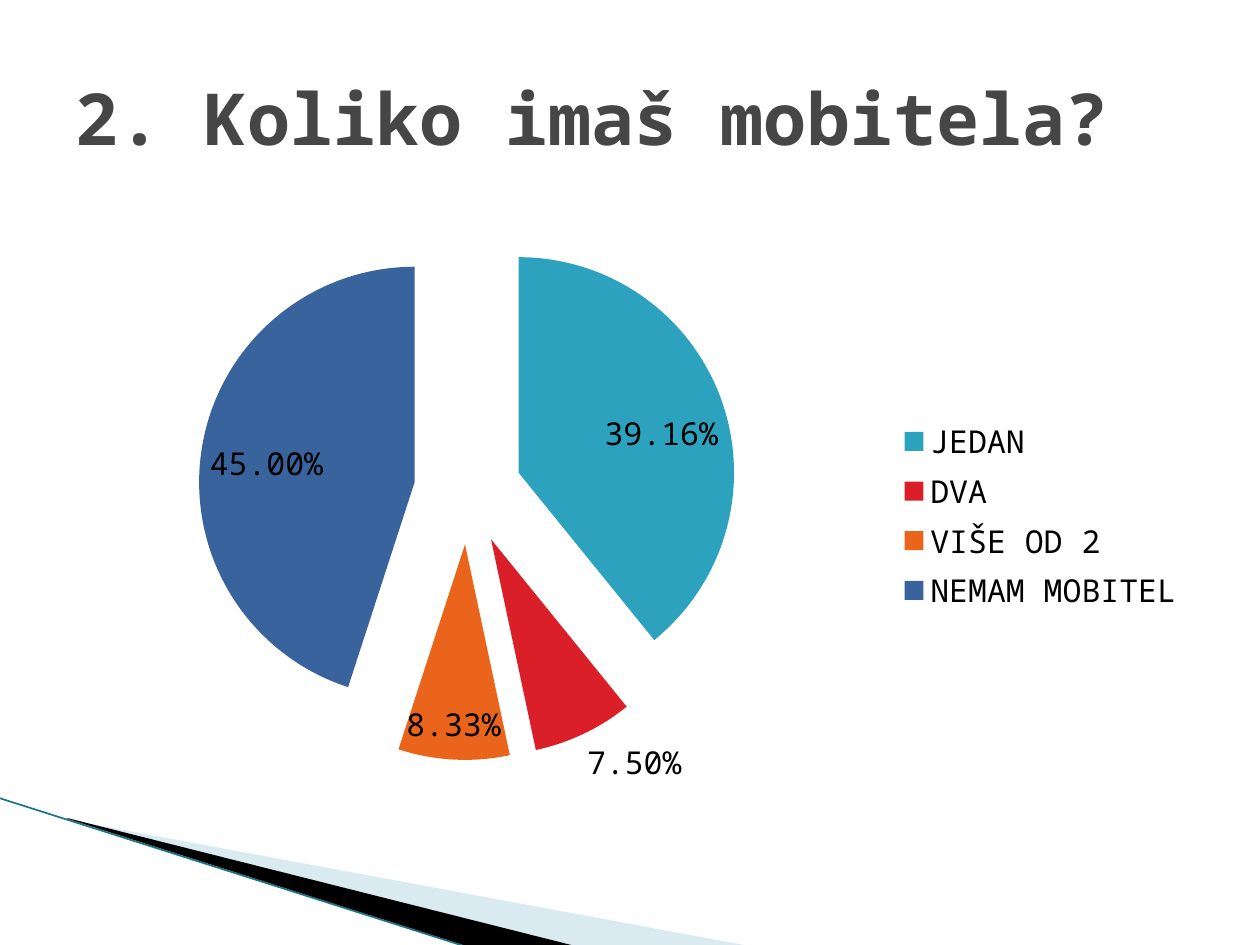
from lxml import etree
from pptx import Presentation
from pptx.chart.data import CategoryChartData
from pptx.dml.color import RGBColor
from pptx.enum.chart import XL_CHART_TYPE as CT, XL_LABEL_POSITION as LP, XL_LEGEND_POSITION as LG
from pptx.enum.shapes import MSO_CONNECTOR
from pptx.enum.text import MSO_ANCHOR
from pptx.oxml import parse_xml
from pptx.oxml.ns import qn
from pptx.util import Pt

FONT = "Noto Sans Mono"
TITLE = "2. Koliko imaš mobitela?"
ANSWERS = [
    ("JEDAN", 0.3916, "2DA2BF"),
    ("DVA", 0.075, "DA1F28"),
    ("VIŠE OD 2", 0.0833, "EB641B"),
    ("NEMAM MOBITEL", 0.45, "39639D"),
]
WEDGES = [
    ((98, 689, 524, 199), [(69, 820), (749, 946), (575, 946), (69, 819)], "A0CBDC", 40),
    ((-8, 798, 524, 116), [(67, 818), (575, 946), (469, 947), (68, 819)], "000000", 100),
]
EDGE = (-1, 798, 467, 947)
EDGE_COLOR = "1A7488"
TITLE_BOX = (63, 38, 1134, 157)
CHART_BOX = (63, 204, 1134, 624)
SCALE = 914400 / 126


def px(*values):
    return [round(v * SCALE) for v in values]


def rgb(color):
    return RGBColor.from_string(color)


def set_font(font, size, color, bold=False):
    font.name, font.size, font.bold = FONT, Pt(size), bold
    font.color.rgb = rgb(color)


def set_frame(sp, frame, points):
    """Give a freeform a frame of its own, keeping its points in place."""
    left, top, width, height = frame
    sp.left, sp.top, sp.width, sp.height = px(*frame)
    outline = sp._element.find(".//" + qn("a:path"))
    outline.set("w", str(width))
    outline.set("h", str(height))
    for pt, (x, y) in zip(outline.iter(qn("a:pt")), points):
        pt.set("x", str(x - left))
        pt.set("y", str(y - top))


def add_wedge(s, frame, points, color, opacity):
    builder = s.shapes.build_freeform(*points[0], scale=SCALE)
    builder.add_line_segments(points[1:], close=False)
    sp = builder.convert_to_shape()
    set_frame(sp, frame, points)
    sp.shadow.inherit = False
    sp.fill.solid()
    sp.fill.fore_color.rgb = rgb(color)
    sp.line.fill.background()
    if opacity < 100:
        clr = sp.fill._xPr.find(".//" + qn("a:srgbClr"))
        etree.SubElement(clr, qn("a:alpha"), val=str(opacity * 1000))


def add_edge(s):
    line = s.shapes.add_connector(MSO_CONNECTOR.STRAIGHT, *px(*EDGE))
    line.line.color.rgb = rgb(EDGE_COLOR)
    line.line.width = Pt(0.95)
    etree.SubElement(line._element.spPr, qn("a:effectLst"))


def add_pie(s):
    data = CategoryChartData(number_format="0.00%")
    data.categories = [name for name, _, _ in ANSWERS]
    data.add_series("Series 1", [value for _, value, _ in ANSWERS])
    chart = s.shapes.add_chart(CT.PIE, *px(*CHART_BOX), data).chart
    set_font(chart.font, 18, "000000")
    chart.has_title = False
    chart.has_legend = True
    chart.legend.position = LG.RIGHT
    chart.legend.include_in_layout = False
    plot = chart.plots[0]
    plot.vary_by_categories = True
    series = plot.series[0]
    for i, (_, _, color) in enumerate(ANSWERS):
        fill = series.points[i].format.fill
        fill.solid()
        fill.fore_color.rgb = rgb(color)
    explosion = parse_xml(
        '<c:explosion xmlns:c="http://schemas.openxmlformats.org/drawingml/2006/chart" val="25"/>')
    series._element.find(qn("c:dPt")).addprevious(explosion)
    labels = series.data_labels
    labels.show_value = True
    labels.number_format = "0.00%"
    labels.number_format_is_linked = False
    labels.position = LP.BEST_FIT


def add_title(s):
    tf = s.shapes.add_textbox(*px(*TITLE_BOX)).text_frame
    tf.word_wrap = True
    tf.vertical_anchor = MSO_ANCHOR.MIDDLE
    tf.text = TITLE
    set_font(tf.paragraphs[0].runs[0].font, 41, "464646", bold=True)


def main():
    """Build the survey slide with its exploded pie chart."""
    prs = Presentation()
    prs.slide_width, prs.slide_height = px(1260, 945)
    s = prs.slides.add_slide(prs.slide_layouts[6])
    for wedge in WEDGES:
        add_wedge(s, *wedge)
    add_edge(s)
    add_pie(s)
    add_title(s)
    prs.save("out.pptx")


if __name__ == "__main__":
    main()
